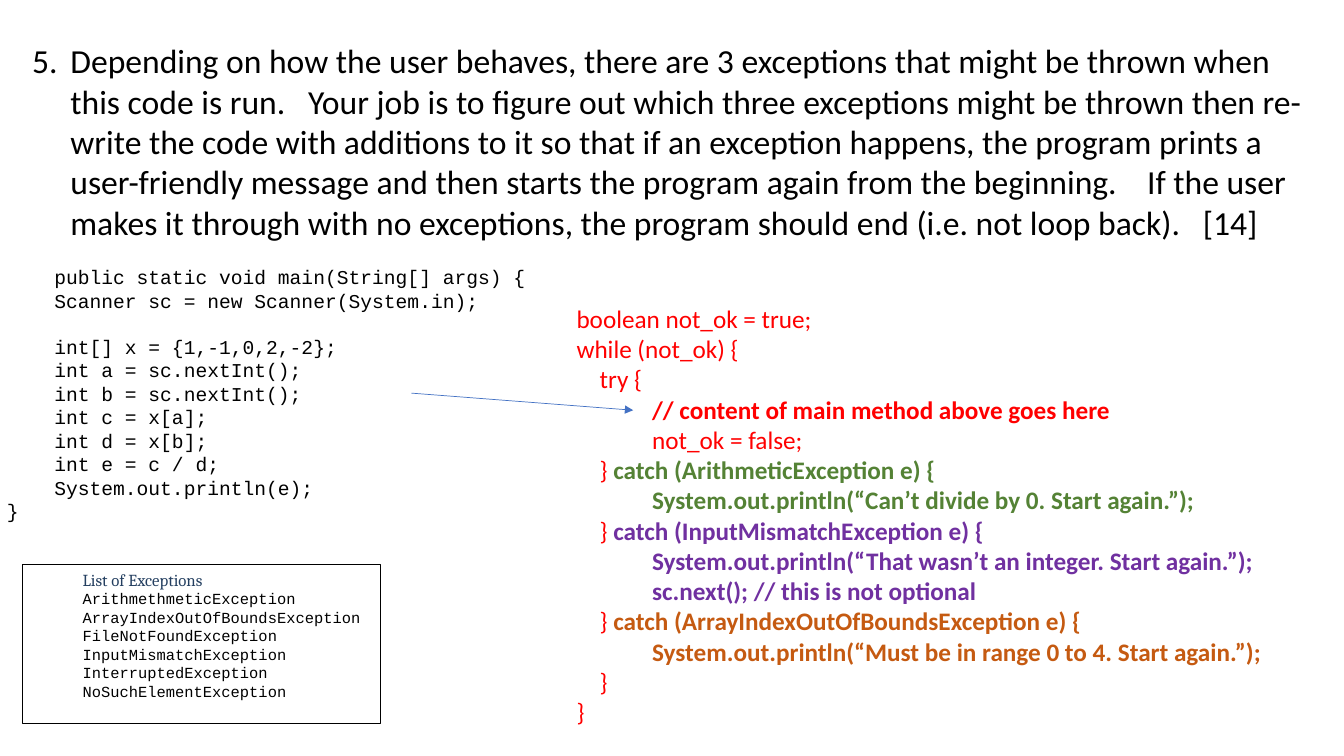
import dataclasses

import lxml.etree
import pptx
import pptx.dml.color
import pptx.enum.shapes
import pptx.oxml
import pptx.oxml.ns
import pptx.util

Inches = pptx.util.Inches
Pt = pptx.util.Pt


@dataclasses.dataclass(frozen=True)
class Theme:
    body_font: str = "Calibri"
    code_font: str = "Courier New"
    heading_font: str = "Cambria"
    black: str = "000000"
    white: str = "FFFFFF"
    navy: str = "243F60"
    red: str = "FF0000"
    green: str = "548235"
    purple: str = "7030A0"
    orange: str = "C55A11"
    blue: str = "4472C4"
    question_size: int = 24
    answer_size: int = 18
    code_size: int = 14
    heading_size: int = 12
    list_size: int = 11
    line_width: float = 0.5


class SlideBuilder:
    def __init__(self, slide, theme):
        self.slide = slide
        self.theme = theme

    def color(self, value):
        return pptx.dml.color.RGBColor.from_string(value)

    def prepare(self, shape, top_inset=0.05):
        frame = shape.text_frame
        frame.word_wrap = True
        frame.margin_top = Inches(top_inset)
        frame.vertical_anchor = pptx.enum.text.MSO_ANCHOR.TOP
        return frame

    def text_box(self, left, top, width, height, top_inset=0.05):
        shape = self.slide.shapes.add_textbox(
            Inches(left), Inches(top), Inches(width), Inches(height))
        return self.prepare(shape, top_inset)

    def framed_box(self, left, top, width, height):
        shape = self.slide.shapes.add_shape(
            pptx.enum.shapes.MSO_SHAPE.RECTANGLE,
            Inches(left), Inches(top), Inches(width), Inches(height))
        shape.shadow.inherit = False
        shape.fill.solid()
        shape.fill.fore_color.rgb = self.color(self.theme.white)
        shape.line.color.rgb = self.color(self.theme.black)
        shape.line.width = Pt(self.theme.line_width)
        return self.prepare(shape)

    def paragraph(self, frame, runs, font, size, indent, margin=0, space_before=0):
        paragraph = frame.paragraphs[0]
        if paragraph.runs:
            paragraph = frame.add_paragraph()
        paragraph.alignment = pptx.enum.text.PP_ALIGN.LEFT
        paragraph.space_before = Pt(space_before)
        properties = paragraph._p.get_or_add_pPr()
        properties.set("marL", str(Inches(margin)))
        properties.set("indent", str(Inches(indent)))
        for text, color, bold in runs:
            run = paragraph.add_run()
            run.text = text
            run.font.name = font
            run.font.size = Pt(size)
            run.font.bold = bold
            run.font.color.rgb = self.color(color)
        return paragraph

    def number(self, paragraph, start):
        bullet = lxml.etree.SubElement(
            paragraph._p.get_or_add_pPr(), pptx.oxml.ns.qn("a:buAutoNum"))
        bullet.set("type", "arabicPeriod")
        bullet.set("startAt", str(start))

    def arrow(self, start, end):
        connector = self.slide.shapes.add_connector(
            pptx.enum.shapes.MSO_CONNECTOR.STRAIGHT,
            *map(Inches, start), *map(Inches, end))
        connector.line.color.rgb = self.color(self.theme.blue)
        connector.line.width = Pt(self.theme.line_width)
        head = lxml.etree.SubElement(
            connector.line._get_or_add_ln(), pptx.oxml.ns.qn("a:tailEnd"))
        head.set("type", "triangle")
        lxml.etree.SubElement(
            connector._element.spPr, pptx.oxml.ns.qn("a:effectLst"))


QUESTION = (
    "Depending on how the user behaves, there are 3 exceptions that might be thrown "
    "when this code is run.   Your job is to figure out which three exceptions might "
    "be thrown then re-write the code with additions to it so that if an exception "
    "happens, the program prints a user-friendly message and then starts the program "
    "again from the beginning.    If the user makes it through with no exceptions, "
    "the program should end (i.e. not loop back).   [14]"
)
SETUP_LINES = [
    "public static void main(String[] args) {",
    "Scanner sc = new Scanner(System.in);",
]
BODY_LINES = [
    "int[] x = {1,-1,0,2,-2};",
    "int a = sc.nextInt();",
    "int b = sc.nextInt();",
    "int c = x[a];",
    "int d = x[b];",
    "int e = c / d;",
    "System.out.println(e);",
]
EXCEPTIONS = [
    "ArithmethmeticException",
    "ArrayIndexOutOfBoundsException",
    "FileNotFoundException",
    "InputMismatchException",
    "InterruptedException",
    "NoSuchElementException",
]


def add_question(builder):
    theme = builder.theme
    frame = builder.text_box(0.22, 0.31, 12.91, 2.79, top_inset=0.09)
    paragraph = builder.paragraph(
        frame, [(QUESTION, theme.black, False)],
        theme.body_font, theme.question_size, -0.38, margin=0.38)
    builder.number(paragraph, 5)


def add_exception_list(builder):
    theme = builder.theme
    frame = builder.framed_box(0.22, 5.6, 3.55, 1.58)
    builder.paragraph(frame, [("List of Exceptions", theme.navy, False)],
                      theme.heading_font, theme.heading_size, 0.5)
    for name in EXCEPTIONS:
        builder.paragraph(frame, [(name, theme.black, False)],
                          theme.code_font, theme.list_size, 0.5)


def add_code(builder):
    theme = builder.theme
    frame = builder.text_box(-0.28, 2.6, 5.8, 3.18, top_inset=0.03)
    for line in SETUP_LINES + BODY_LINES + ["}"]:
        builder.paragraph(
            frame, [(line, theme.black, False)], theme.code_font, theme.code_size,
            0.25 if line == "}" else 0.72,
            space_before=16 if line == BODY_LINES[0] else 0)


def add_answer(builder):
    theme = builder.theme
    outer, inner, deep = 0.25, 0.48, 1
    lines = [
        (outer, [("boolean not_ok = true;", theme.red, False)]),
        (outer, [("while (not_ok) {", theme.red, False)]),
        (inner, [("try {", theme.red, False)]),
        (deep, [("// content of main method above goes here", theme.red, True)]),
        (deep, [("not_ok = false;", theme.red, False)]),
    ]
    catches = [
        ("ArithmeticException", theme.green,
         ["System.out.println(“Can’t divide by 0. Start again.”);"]),
        ("InputMismatchException", theme.purple,
         ["System.out.println(“That wasn’t an integer. Start again.”);",
          "sc.next(); // this is not optional"]),
        ("ArrayIndexOutOfBoundsException", theme.orange,
         ["System.out.println(“Must be in range 0 to 4. Start again.”);"]),
    ]
    for name, color, statements in catches:
        lines.append((inner, [("} ", theme.red, False),
                              (f"catch ({name} e) {{", color, True)]))
        lines += [(deep, [(statement, color, True)]) for statement in statements]
    lines += [(indent, [("}", theme.red, False)]) for indent in (inner, outer)]
    frame = builder.text_box(5.37, 2.96, 7.74, 4.34)
    for indent, runs in lines:
        builder.paragraph(frame, runs, theme.body_font, theme.answer_size, indent)


def main():
    presentation = pptx.Presentation()
    presentation.slide_width = Inches(13.33)
    presentation.slide_height = Inches(7.5)
    slide = presentation.slides.add_slide(presentation.slide_layouts[6])
    builder = SlideBuilder(slide, Theme())
    add_question(builder)
    add_exception_list(builder)
    add_code(builder)
    add_answer(builder)
    builder.arrow((4.08, 3.9), (6.28, 4.07))
    presentation.save("out.pptx")


if __name__ == "__main__":
    main()
